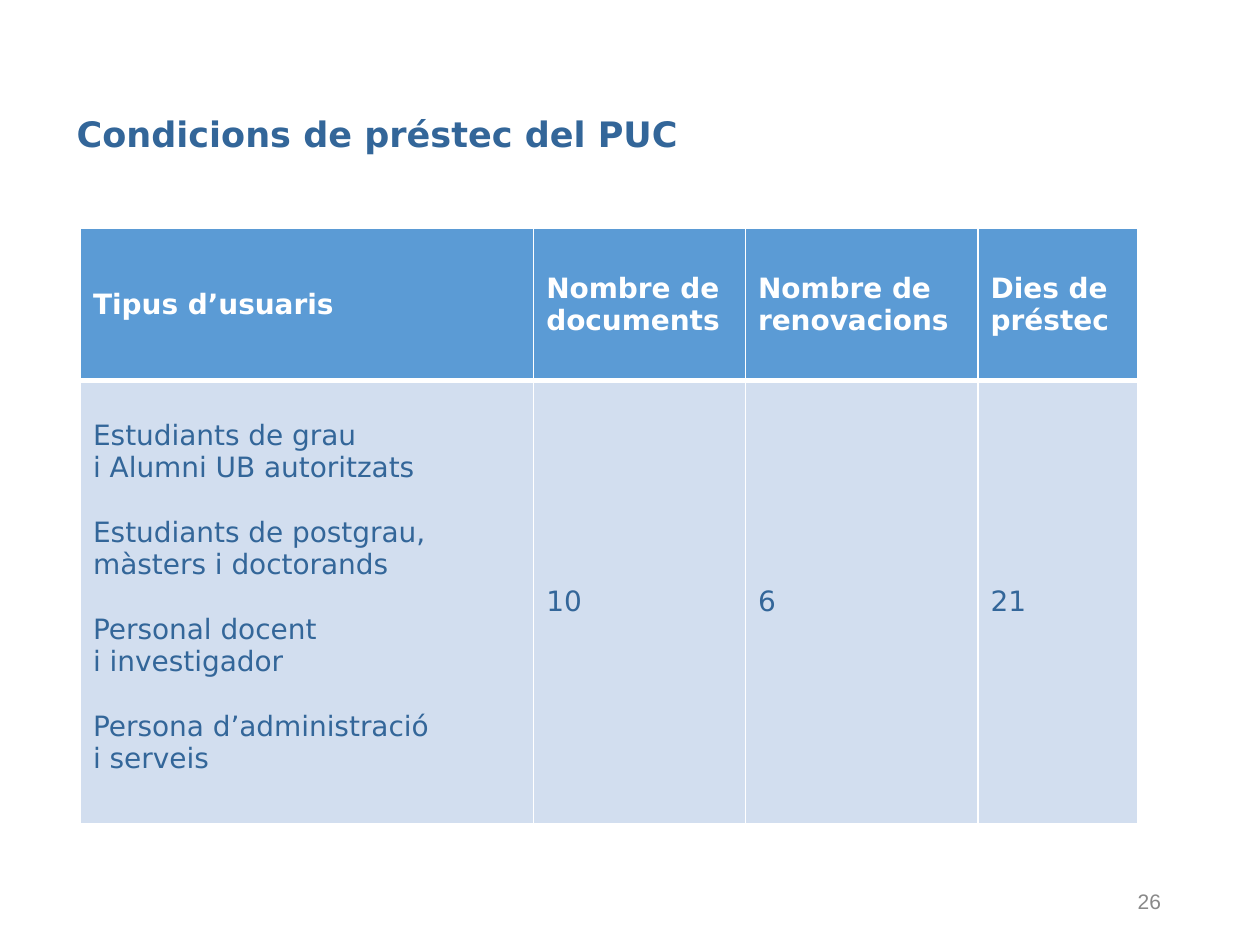
from lxml import etree
from pptx import Presentation
from pptx.dml.color import RGBColor
from pptx.enum import text
from pptx.oxml import ns
from pptx.util import Pt

LEFT, RIGHT = text.PP_ALIGN.LEFT, text.PP_ALIGN.RIGHT
TOP, MIDDLE = text.MSO_ANCHOR.TOP, text.MSO_ANCHOR.MIDDLE


def color(value):
    return RGBColor.from_string(value)


def write(p, content, size=16, font="DejaVu Sans", fill="336699", bold=False,
          align=LEFT, before=0, spacing=None):
    p.alignment = align
    p.space_before = Pt(before)
    if spacing:
        p.line_spacing = spacing
    r = p.add_run()
    r.text = content
    r.font.size, r.font.name, r.font.bold = Pt(size), font, bold
    r.font.color.rgb = color(fill)


class Deck:
    header, body, border = "5B9BD5", "D2DEEF", "FFFFFF"
    line = 18.5  # height of one line of table text

    def __init__(self, width, height):
        self.prs = Presentation()
        self.prs.slide_width, self.prs.slide_height = Pt(width), Pt(height)
        self.s = self.prs.slides.add_slide(self.prs.slide_layouts[6])

    def text(self, content, x, y, w, h, anchor=TOP, **style):
        tf = self.s.shapes.add_textbox(Pt(x), Pt(y), Pt(w), Pt(h)).text_frame
        tf.word_wrap = True
        tf.vertical_anchor = anchor
        write(tf.paragraphs[0], content, **style)

    def table(self, x, y, widths, heights, rows):
        tbl = self.s.shapes.add_table(
            len(rows), len(widths), Pt(x), Pt(y),
            Pt(sum(widths)), Pt(sum(heights))).table
        for column, w in zip(tbl.columns, widths):
            column.width = Pt(w)
        for row, h in zip(tbl.rows, heights):
            row.height = Pt(h)
        for i, row in enumerate(rows):
            for j, content in enumerate(row):
                self.cell(tbl.cell(i, j), content, is_header=i == 0)

    def cell(self, cell, content, is_header):
        # The rule between header and body is thicker than the others
        self.borders(cell, L=1, R=1, T=1 if is_header else 3,
                     B=3 if is_header else 1)
        cell.fill.solid()
        cell.fill.fore_color.rgb = color(self.header if is_header else self.body)
        cell.vertical_anchor = MIDDLE
        style = {"fill": "FFFFFF", "bold": True} if is_header else {}
        if isinstance(content, str):
            write(cell.text_frame.paragraphs[0], content, **style)
        else:
            self.groups(cell, content, **style)

    def groups(self, cell, groups, **style):
        # Groups of lines, with one line of space above each
        cell.vertical_anchor = TOP
        cell.margin_top = Pt(3.6 + self.line)
        tf = cell.text_frame
        for i, group in enumerate(groups):
            for j, content in enumerate(group):
                first = i == j == 0
                p = tf.paragraphs[0] if first else tf.add_paragraph()
                gap = self.line if i and j == 0 else 0
                write(p, content, before=gap, **style)

    def borders(self, cell, **widths):
        tcPr = cell._tc.get_or_add_tcPr()
        for side, width in widths.items():
            ln = etree.SubElement(tcPr, ns.qn(f"a:ln{side}"), w=str(Pt(width)))
            fill = etree.SubElement(ln, ns.qn("a:solidFill"))
            etree.SubElement(fill, ns.qn("a:srgbClr"), val=self.border)


def main():
    deck = Deck(720, 540)

    # Title
    deck.text("Condicions de préstec del PUC", 36.7, 63.4, 641, 29,
              size=20, bold=True, spacing=0.9)

    # Loan conditions
    users = [
        ["Estudiants de grau", "i Alumni UB autoritzats"],
        ["Estudiants de postgrau, màsters i doctorands"],
        ["Personal docent", "i investigador"],
        ["Persona d’administració", "i serveis"],
    ]
    deck.table(46, 130.5, [259, 121, 133, 91], [87, 253], [
        ["Tipus d’usuaris", "Nombre de documents",
         "Nombre de renovacions", "Dies de préstec"],
        [users, "10", "6", "21"],
    ])

    # Slide number
    deck.text("26", 508.5, 500.5, 162, 28.8, anchor=MIDDLE,
              size=12, font="Arial", fill="898989", align=RIGHT)

    deck.prs.save("out.pptx")


if __name__ == "__main__":
    main()
